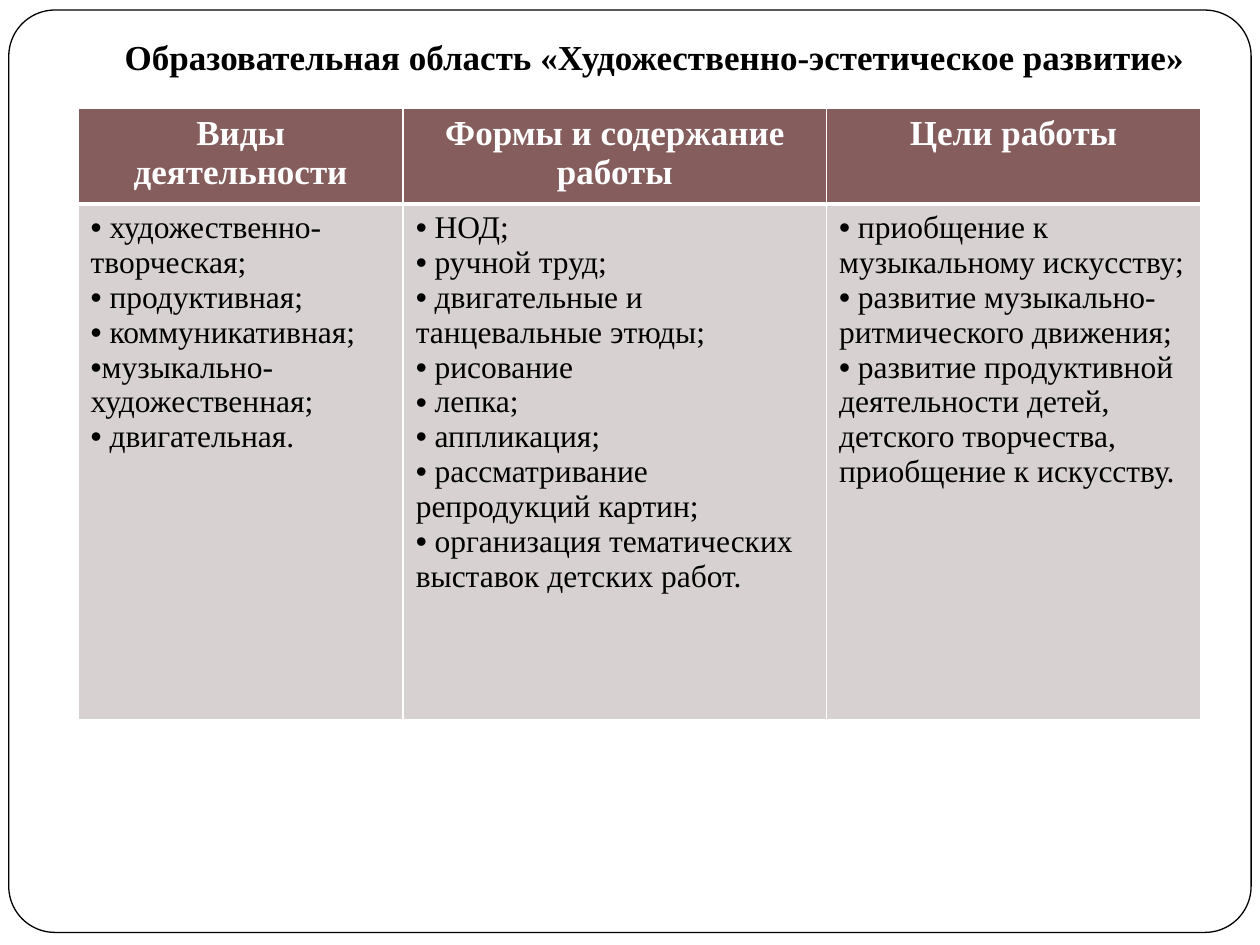
from lxml import etree
from pptx import Presentation
from pptx.dml.color import RGBColor
from pptx.enum import shapes, text
from pptx.oxml import ns
from pptx.util import Inches, Pt

HEADING = "Образовательная область «Художественно-эстетическое развитие»"
COLUMNS = [
    ("Виды деятельности", 2.58, [
        " художественно-творческая;",
        " продуктивная;",
        " коммуникативная;",
        "музыкально-художественная;",
        " двигательная.",
    ]),
    ("Формы и содержание работы", 3.36, [
        " НОД;",
        " ручной труд;",
        " двигательные и танцевальные этюды;",
        " рисование",
        " лепка;",
        " аппликация;",
        " рассматривание репродукций картин;",
        " организация тематических выставок детских работ.",
    ]),
    ("Цели работы", 2.97, [
        " приобщение к музыкальному искусству;",
        " развитие музыкально-ритмического движения;",
        " развитие продуктивной деятельности детей, детского творчества, "
        "приобщение к искусству.",
    ]),
]
ROW_HEIGHTS = [0.76, 4.09]
FONT = "Times New Roman"
BLACK, WHITE, HEADER_FILL, BODY_FILL = "000000", "FFFFFF", "855D5D", "D8D1D1"


def rgb(value):
    return RGBColor.from_string(value)


def add_child(parent, tag, **attributes):
    return etree.SubElement(parent, ns.qn(tag), attributes)


def style(frame, size, color, bold, align):
    for paragraph in frame.paragraphs:
        paragraph.alignment = align
        for run in paragraph.runs:
            run.font.name = FONT
            run.font.size = Pt(size)
            run.font.bold = bold
            run.font.color.rgb = rgb(color)


def add_bullet(paragraph):
    properties = paragraph._p.get_or_add_pPr()
    properties.set("marL", "0")
    properties.set("indent", str(Inches(-0.12)))
    add_child(add_child(properties, "a:buClr"), "a:srgbClr", val=BLACK)
    add_child(properties, "a:buFont", typeface="Arial")
    add_child(properties, "a:buChar", char="•")


def paint(cell, fill, top, bottom):
    properties = cell._tc.get_or_add_tcPr()
    for side, width in zip("LRTB", (1, 1, top, bottom)):
        border = add_child(properties, f"a:ln{side}", w=str(Pt(width)))
        add_child(add_child(border, "a:solidFill"), "a:srgbClr", val=WHITE)
    cell.fill.solid()
    cell.fill.fore_color.rgb = rgb(fill)


prs = Presentation()
prs.slide_width, prs.slide_height = Inches(10), Inches(7.5)
slide = prs.slides.add_slide(prs.slide_layouts[5])

frame = slide.shapes.add_shape(
    shapes.MSO_SHAPE.ROUNDED_RECTANGLE,
    Inches(0.07), Inches(0.08), Inches(9.86), Inches(7.32))
frame.adjustments[0] = 0.05
frame.shadow.inherit = False
frame.fill.solid()
frame.fill.fore_color.rgb = rgb(WHITE)
frame.line.color.rgb = rgb(BLACK)
frame.line.width = Pt(0.75)
slide.shapes._spTree.insert(2, frame._element)

title = slide.shapes.title
title.left, title.top = Inches(0.86), Inches(0.23)
title.width, title.height = Inches(8.67), Inches(0.44)
title.text_frame.text = HEADING
title.text_frame.vertical_anchor = text.MSO_ANCHOR.TOP
style(title.text_frame, 20, BLACK, True, text.PP_ALIGN.CENTER)

table = slide.shapes.add_table(
    len(ROW_HEIGHTS), len(COLUMNS), Inches(0.62), Inches(0.86),
    Inches(sum(width for _, width, _ in COLUMNS)),
    Inches(sum(ROW_HEIGHTS))).table
for row, height in zip(table.rows, ROW_HEIGHTS):
    row.height = Inches(height)

for index, (header, width, items) in enumerate(COLUMNS):
    table.columns[index].width = Inches(width)
    header_cell, body_cell = table.cell(0, index), table.cell(1, index)

    paint(header_cell, HEADER_FILL, 1, 3)
    header_cell.text_frame.text = header
    style(header_cell.text_frame, 20, WHITE, True, text.PP_ALIGN.CENTER)

    paint(body_cell, BODY_FILL, 3, 1)
    body_cell.text_frame.text = "\n".join(items)
    for paragraph in body_cell.text_frame.paragraphs:
        add_bullet(paragraph)
    style(body_cell.text_frame, 18, BLACK, False, text.PP_ALIGN.LEFT)

prs.save("out.pptx")
